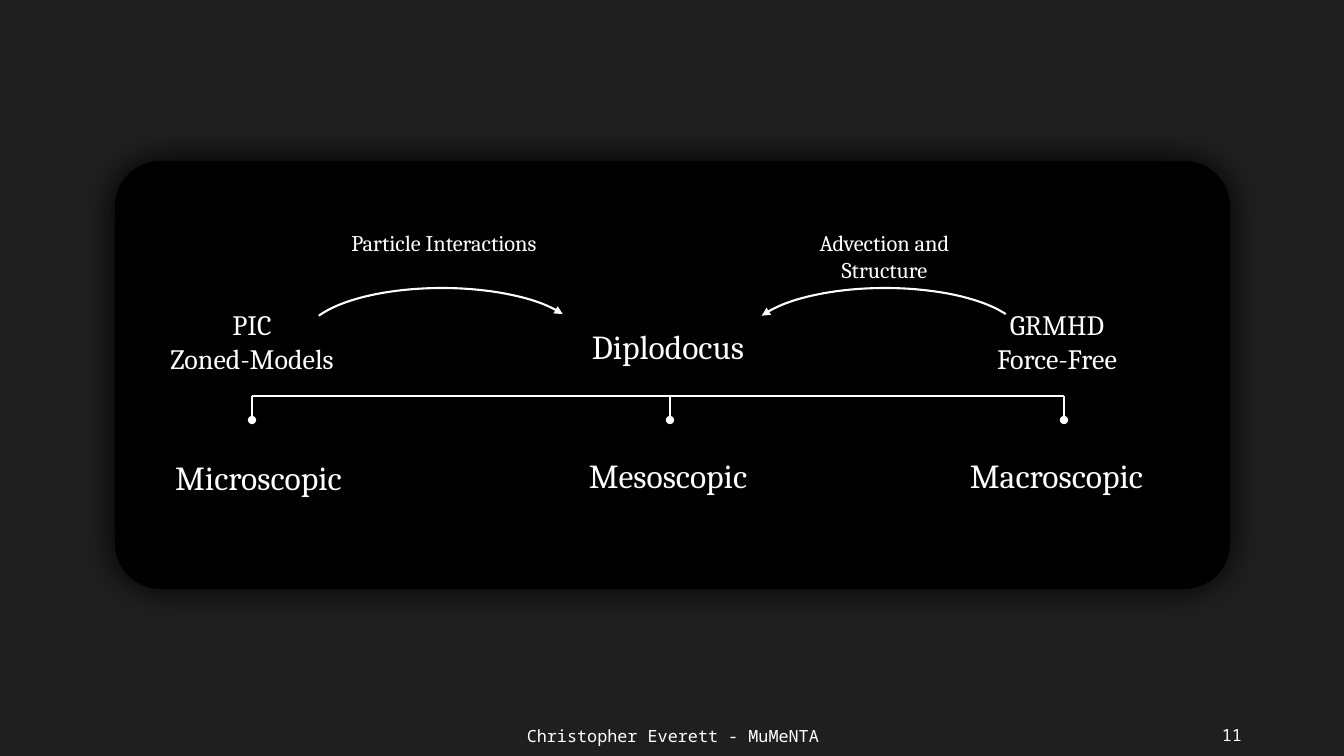
from lxml.etree import SubElement
from pptx import Presentation
from pptx.dml.color import RGBColor
from pptx.enum.shapes import MSO_CONNECTOR, MSO_SHAPE
from pptx.enum.text import MSO_ANCHOR, MSO_AUTO_SIZE, PP_ALIGN
from pptx.oxml.ns import qn
from pptx.util import Pt

EMU_PER_PX = 914400 / 100.8
WHITE = RGBColor(0xFF, 0xFF, 0xFF)
BLACK = RGBColor(0x00, 0x00, 0x00)
CHARCOAL = RGBColor(0x1F, 0x1F, 0x1F)
SERIF = "Cambria"
MONO = "Noto Sans Mono"


def px(*lengths):
    return [round(length * EMU_PER_PX) for length in lengths]


def add_text(slide, box, text, size=24, font=SERIF, align=PP_ALIGN.CENTER,
             anchor=MSO_ANCHOR.TOP, grow=True):
    """Add a text box with one paragraph per line of text."""
    frame = slide.shapes.add_textbox(*px(*box)).text_frame
    frame.word_wrap = True
    frame.auto_size = MSO_AUTO_SIZE.SHAPE_TO_FIT_TEXT if grow else MSO_AUTO_SIZE.NONE
    frame.vertical_anchor = anchor
    frame.text = text
    for paragraph in frame.paragraphs:
        paragraph.alignment = align
        paragraph.font.size = Pt(size)
        paragraph.font.name = font
        paragraph.font.color.rgb = WHITE


def style_line(shape, end=None, marker=None):
    """Make the outline white; end is headEnd or tailEnd."""
    shape.line.color.rgb = WHITE
    shape.line.width = Pt(1.5)
    if end:
        SubElement(shape.line._get_or_add_ln(), qn("a:" + end), type=marker)


def add_line(slide, begin, end, marker=None):
    connector = slide.shapes.add_connector(
        MSO_CONNECTOR.STRAIGHT, *px(*begin, *end))
    style_line(connector, "tailEnd" if marker else None, marker)
    SubElement(connector._element.spPr, qn("a:effectLst"))


def add_panel(slide, box):
    panel = slide.shapes.add_shape(MSO_SHAPE.ROUNDED_RECTANGLE, *px(*box))
    panel.adjustments[0] = 0.107
    panel.fill.solid()
    panel.fill.fore_color.rgb = BLACK
    panel.line.fill.background()
    effects = SubElement(panel._element.spPr, qn("a:effectLst"))
    glow = SubElement(effects, qn("a:outerShdw"), blurRad=str(Pt(25)), dist="0",
                      dir="0", algn="ctr", rotWithShape="0")
    SubElement(glow, qn("a:srgbClr"), val=str(BLACK))


def add_stage_names(slide, box):
    left, top, _, _ = box
    stages = [("Microscopic", 0, 2, 287), ("Mesoscopic", 403, 0, 300),
              ("Macroscopic", 797, 0, 289)]
    for name, x, y, width in stages:
        add_text(slide, (left + x, top + y, width, 50), name)


def add_bracket(slide, box):
    left, top, width, height = box
    add_line(slide, (left, top), (left + width, top))
    for x in (0, 418, width):
        add_line(slide, (left + x, top), (left + x, top + height), "oval")


def add_models(slide, box):
    left, top, _, height = box
    models = [("PIC\nZoned-Models", 20, 0, 226, 0),
              ("Diplodocus", 24, 403, 252, 18),
              ("GRMHD\nForce-Free", 20, 800, 236, 0)]
    for names, size, x, width, drop in models:
        add_text(slide, (left + x, top + drop, width, height - drop), names, size)


def add_influence(slide, box, text, label_x, label_width, arrow_end):
    """Place an arc in the box, with its label 64 px above it."""
    left, top, _, _ = box
    arc = slide.shapes.add_shape(MSO_SHAPE.ARC, *px(*box))
    arc.adjustments[0] = 114.278
    arc.adjustments[1] = 209.142
    arc.fill.background()
    arc.shadow.inherit = False
    style_line(arc, arrow_end, "triangle")
    add_text(slide, (left + label_x, top - 64, label_width, 64), text, 16)


def add_footer(slide, box):
    left, top, width, height = box
    style = dict(size=12, font=MONO, anchor=MSO_ANCHOR.MIDDLE, grow=False)
    add_text(slide, (left, top, 454, height), "Christopher Everett - MuMeNTA", **style)
    add_text(slide, (left + width - 302, top - 1, 302, height), "11",
             align=PP_ALIGN.RIGHT, **style)


def main():
    presentation = Presentation()
    presentation.slide_width, presentation.slide_height = px(1344, 756)
    slide = presentation.slides.add_slide(presentation.slide_layouts[6])
    slide.background.fill.solid()
    slide.background.fill.fore_color.rgb = CHARCOAL

    add_panel(slide, (115, 161, 1115, 428))
    add_stage_names(slide, (115, 450, 1086, 52))
    add_bracket(slide, (252, 396, 812, 24))
    add_models(slide, (139, 303, 1036, 78))
    add_influence(slide, (304, 288, 276, 101), "Particle Interactions",
                  34, 212, "tailEnd")
    add_influence(slide, (747, 288, 276, 101), "Advection and\nStructure",
                  -15, 305, "headEnd")
    add_footer(slide, (446, 716, 806, 40))
    presentation.save("out.pptx")


if __name__ == "__main__":
    main()
